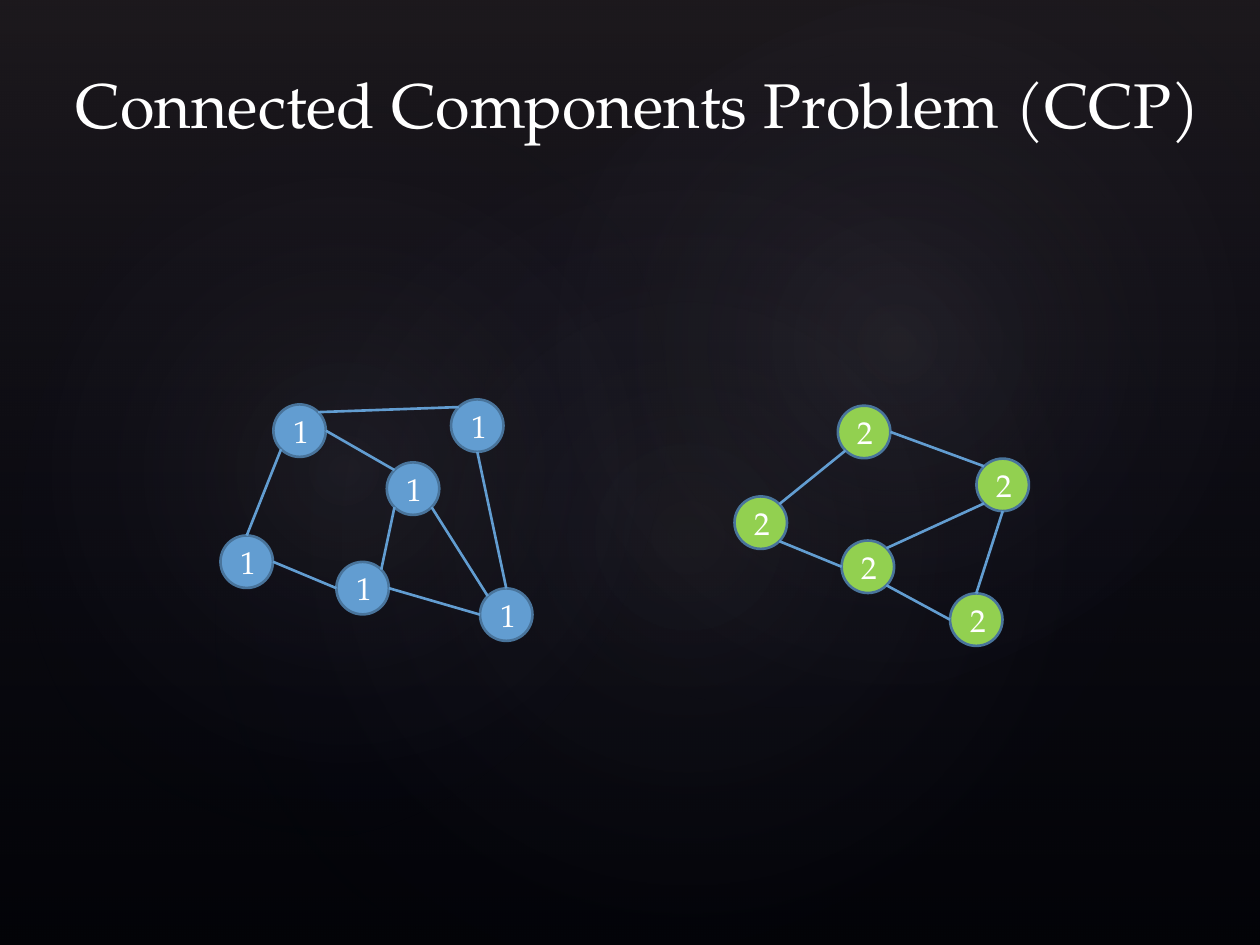
from enum import Enum
from math import cos, radians, sin
from typing import NamedTuple

from lxml.etree import SubElement
from pptx import Presentation
from pptx.dml.color import RGBColor
from pptx.enum.shapes import MSO_CONNECTOR as Connector, MSO_SHAPE as Preset
from pptx.enum.text import MSO_ANCHOR as Anchor, MSO_AUTO_SIZE as AutoSize, PP_ALIGN as Align
from pptx.oxml import parse_xml
from pptx.oxml.ns import nsdecls, qn
from pptx.util import Inches, Pt

COLORS = {
    "background": "000000",
    "text": "FFFFFF",
    "first": "629DD1",
    "second": "92D050",
    "outline": "49749B",
    "edge": "629DD1",
    "veil": "504652",
    "glow": "C4BCC6",
    "haze": "242852",
}
FONT = "TeX Gyre Pagella"
DIAMETER = Pt(30).inches
LINE_WIDTH = Pt(1.5)


class Side(Enum):
    RIGHT = 0
    LOWER_RIGHT = 45
    BOTTOM = 90
    LOWER_LEFT = 135
    LEFT = 180
    UPPER_LEFT = 225
    TOP = 270
    UPPER_RIGHT = 315


class Glow(NamedTuple):
    left: float
    top: float
    width: float
    height: float
    rotation: float
    opacity: int


class Node(NamedTuple):
    left: float
    top: float


class Edge(NamedTuple):
    start: str
    leaving: Side
    end: str
    entering: Side


class Component(NamedTuple):
    label: str
    color: str
    nodes: dict[str, Node]
    edges: list[Edge]


GLOWS = [
    Glow(1.5, 1.14, 7.92, 6.24, 328.7, 7),
    Glow(-0.3, 1.28, 6.06, 4.9, 294.3, 8),
    Glow(3.58, 0.13, 7.09, 5.2, 328.7, 8),
]
COMPONENTS = [
    Component(
        "1", "first",
        {
            "upper left": Node(2.17, 3.21),
            "bottom": Node(2.67, 4.46),
            "upper right": Node(3.58, 3.17),
            "left": Node(1.75, 4.25),
            "center": Node(3.07, 3.67),
            "lower right": Node(3.81, 4.67),
        },
        [
            Edge("upper left", Side.LOWER_LEFT, "left", Side.TOP),
            Edge("left", Side.RIGHT, "bottom", Side.LEFT),
            Edge("upper left", Side.RIGHT, "center", Side.UPPER_LEFT),
            Edge("center", Side.LOWER_LEFT, "bottom", Side.UPPER_RIGHT),
            Edge("bottom", Side.RIGHT, "lower right", Side.LEFT),
            Edge("upper right", Side.BOTTOM, "lower right", Side.TOP),
            Edge("upper left", Side.UPPER_RIGHT, "upper right", Side.UPPER_LEFT),
            Edge("center", Side.LOWER_RIGHT, "lower right", Side.UPPER_LEFT),
        ],
    ),
    Component(
        "2", "second",
        {
            "top": Node(6.65, 3.22),
            "left": Node(5.83, 3.94),
            "center": Node(6.68, 4.29),
            "right": Node(7.75, 3.64),
            "bottom": Node(7.54, 4.71),
        },
        [
            Edge("top", Side.LOWER_LEFT, "left", Side.UPPER_RIGHT),
            Edge("left", Side.LOWER_RIGHT, "center", Side.LEFT),
            Edge("center", Side.LOWER_RIGHT, "bottom", Side.LEFT),
            Edge("right", Side.BOTTOM, "bottom", Side.TOP),
            Edge("center", Side.UPPER_RIGHT, "right", Side.LOWER_LEFT),
            Edge("top", Side.RIGHT, "right", Side.UPPER_LEFT),
        ],
    ),
]


def rgb(name: str) -> RGBColor:
    return RGBColor.from_string(COLORS[name])


def apply_format(target, values: dict) -> None:
    for attribute, value in values.items():
        setattr(target, attribute, value)


def write_text(frame, wording: str, size: int, alignment: Align, frame_format: dict) -> None:
    apply_format(frame, frame_format)
    paragraph = frame.paragraphs[0]
    paragraph.alignment = alignment
    run = paragraph.add_run()
    run.text = wording
    apply_format(run.font, {"name": FONT, "size": Pt(size)})
    run.font.color.rgb = rgb("text")


def fill_gradient(shape, stops: list[tuple[int, str, int]], direction: str) -> None:
    stop_xml = "".join(
        f'<a:gs pos="{position * 1000}"><a:srgbClr val="{COLORS[color]}">'
        f'<a:alpha val="{opacity * 1000}"/></a:srgbClr></a:gs>'
        for position, color, opacity in stops
    )
    gradient = parse_xml(
        f'<a:gradFill {nsdecls("a")} rotWithShape="1"><a:gsLst>{stop_xml}</a:gsLst>{direction}</a:gradFill>'
    )
    shape.element.spPr.insert(2, gradient)
    shape.line.fill.background()
    shape.shadow.inherit = False


def draw_backdrop(slide, width: int, height: int) -> None:
    slide.background.fill.solid()
    slide.background.fill.fore_color.rgb = rgb("background")
    veil = slide.shapes.add_shape(Preset.RECTANGLE, 0, 0, width, height)
    fill_gradient(veil, [(0, "veil", 36), (100, "haze", 10)], '<a:lin ang="5400000" scaled="0"/>')
    radial = '<a:path path="circle"><a:fillToRect l="50000" t="50000" r="50000" b="50000"/></a:path>'
    for glow in GLOWS:
        bounds = map(Inches, (glow.left, glow.top, glow.width, glow.height))
        ellipse = slide.shapes.add_shape(Preset.OVAL, *bounds)
        ellipse.rotation = glow.rotation
        fill_gradient(ellipse, [(0, "glow", glow.opacity), (58, "haze", 0)], radial)


def draw_title(slide, wording: str) -> None:
    title = slide.shapes.title
    title.element.getparent().append(title.element)
    apply_format(title, {
        "left": Inches(0.5), "top": Inches(0.17), "width": Inches(9.17), "height": Inches(1),
    })
    write_text(title.text_frame, wording, 36, Align.LEFT, {
        "vertical_anchor": Anchor.BOTTOM, "word_wrap": True, "auto_size": AutoSize.NONE,
    })


def draw_node(slide, node: Node, label: str, color: str) -> None:
    circle = slide.shapes.add_shape(
        Preset.OVAL, Inches(node.left), Inches(node.top), Inches(DIAMETER), Inches(DIAMETER)
    )
    circle.shadow.inherit = False
    circle.fill.solid()
    circle.fill.fore_color.rgb = rgb(color)
    circle.line.color.rgb = rgb("outline")
    circle.line.width = LINE_WIDTH
    write_text(circle.text_frame, label, 18, Align.CENTER, {
        "vertical_anchor": Anchor.MIDDLE, "word_wrap": True,
    })


def rim_point(node: Node, side: Side) -> tuple[int, int]:
    radius, angle = DIAMETER / 2, radians(side.value)
    return (
        Inches(node.left + radius * (1 + cos(angle))),
        Inches(node.top + radius * (1 + sin(angle))),
    )


def draw_edge(slide, edge: Edge, nodes: dict[str, Node]) -> None:
    start = rim_point(nodes[edge.start], edge.leaving)
    end = rim_point(nodes[edge.end], edge.entering)
    link = slide.shapes.add_connector(Connector.STRAIGHT, *start, *end)
    link.line.color.rgb = rgb("edge")
    link.line.width = LINE_WIDTH
    SubElement(link.element.spPr, qn("a:effectLst"))


def main() -> None:
    deck = Presentation()
    apply_format(deck, {"slide_width": Inches(10), "slide_height": Inches(7.5)})
    slide = deck.slides.add_slide(deck.slide_layouts[5])
    draw_backdrop(slide, deck.slide_width, deck.slide_height)
    draw_title(slide, "Connected Components Problem (CCP)")
    for component in COMPONENTS:
        for node in component.nodes.values():
            draw_node(slide, node, component.label, component.color)
    for component in COMPONENTS:
        for edge in component.edges:
            draw_edge(slide, edge, component.nodes)
    deck.save("out.pptx")


if __name__ == "__main__":
    main()
